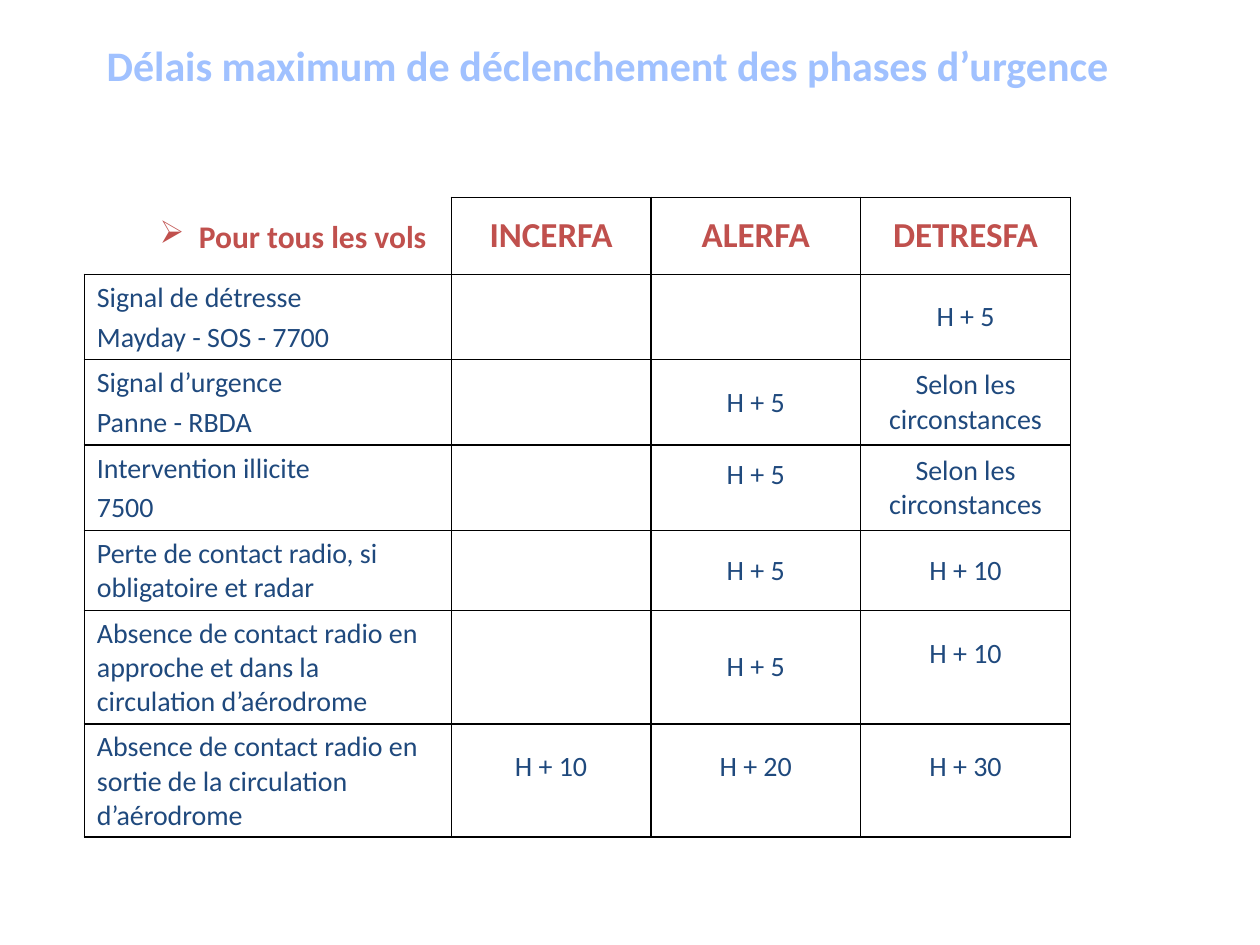
from dataclasses import dataclass

from lxml.etree import SubElement
from pptx import Presentation
from pptx.dml.color import RGBColor
from pptx.enum.text import MSO_ANCHOR, PP_ALIGN
from pptx.oxml.ns import qn
from pptx.util import Cm, Pt


@dataclass(frozen=True)
class Theme:
    font: str = "Calibri"
    title: RGBColor = RGBColor(0xA0, 0xC1, 0xFF)
    accent: RGBColor = RGBColor(0xC0, 0x50, 0x4D)
    body: RGBColor = RGBColor(0x1F, 0x49, 0x7D)
    border: str = "000000"
    title_size: int = 24
    header_size: int = 20
    label_size: int = 18
    body_size: int = 16
    border_width: int = 1


class SlideBuilder:
    def __init__(self, page, theme):
        self.page = page
        self.theme = theme

    def style(self, para, size, color, bold=False):
        font = para.font
        font.name = self.theme.font
        font.size = Pt(size)
        font.bold = bold
        font.color.rgb = color

    def text(self, content, left, top, width, height, size, color):
        box = self.page.shapes.add_textbox(Cm(left), Cm(top), Cm(width), Cm(height))
        frame = box.text_frame
        frame.word_wrap = True
        frame.vertical_anchor = MSO_ANCHOR.MIDDLE
        para = frame.paragraphs[0]
        para.text = content
        self.style(para, size, color, bold=True)
        return para

    def bulleted_text(self, content, left, top, width, height, size, color, symbol):
        para = self.text(content, left, top, width, height, size, color)
        properties = para._p.get_or_add_pPr()
        properties.set("marL", str(Cm(2.06)))
        properties.set("indent", str(-Cm(0.79)))
        bullet = properties.makeelement(qn("a:buChar"), {"char": symbol})
        properties.insert(0, bullet)

    def borders(self, cell, visible):
        properties = cell._tc.get_or_add_tcPr()
        for side in "LRTB":
            line = SubElement(properties, qn(f"a:ln{side}"), w=str(Pt(self.theme.border_width)))
            if side in visible:
                fill = SubElement(line, qn("a:solidFill"))
                SubElement(fill, qn("a:srgbClr"), val=self.theme.border)
            else:
                SubElement(line, qn("a:noFill"))

    def cell(self, cell, content, size, color, bold, centred):
        if not content:
            return
        frame = cell.text_frame
        frame.text = content
        if centred:
            cell.vertical_anchor = MSO_ANCHOR.MIDDLE
        for index, para in enumerate(frame.paragraphs):
            if index:
                para.space_before = Pt(size * 0.2)
            if centred:
                para.alignment = PP_ALIGN.CENTER
            self.style(para, size, color, bold)

    def table(self, rows, left, top, widths, heights, raised):
        frame = self.page.shapes.add_table(
            len(rows), len(widths), Cm(left), Cm(top), Cm(sum(widths)), Cm(sum(heights))
        )
        table = frame.table
        table.first_row = False
        table.horz_banding = False
        for column, width in zip(table.columns, widths):
            column.width = Cm(width)
        for row, height in zip(table.rows, heights):
            row.height = Cm(height)
        theme = self.theme
        for r, values in enumerate(rows):
            header = r == 0
            size = theme.header_size if header else theme.body_size
            color = theme.accent if header else theme.body
            for c, content in enumerate(values):
                cell = table.cell(r, c)
                self.borders(cell, "RB" if header and c == 0 else "LRTB")
                cell.fill.background()
                self.cell(cell, content, size, color, header, centred=c > 0)
                if (r, c) in raised:
                    cell.margin_bottom = Cm(0.67)


def main():
    deck = Presentation()
    deck.slide_width, deck.slide_height = Cm(25.4), Cm(19.05)
    theme = Theme()
    builder = SlideBuilder(deck.slides.add_slide(deck.slide_layouts[6]), theme)

    title = builder.text(
        "Délais maximum de déclenchement des phases d’urgence",
        1.9, 0, 21.6, 2.74, theme.title_size, theme.title,
    )
    title.line_spacing = 0.9

    delays = [
        ("", "INCERFA", "ALERFA", "DETRESFA"),
        ("Signal de détresse\nMayday - SOS - 7700", "", "", "H + 5"),
        ("Signal d’urgence\nPanne - RBDA", "", "H + 5", "Selon les circonstances"),
        ("Intervention illicite\n7500", "", "H + 5", "Selon les circonstances"),
        ("Perte de contact radio, si obligatoire et radar", "", "H + 5", "H + 10"),
        ("Absence de contact radio en approche et dans la circulation d’aérodrome",
         "", "H + 5", "H + 10"),
        ("Absence de contact radio en sortie de la circulation d’aérodrome",
         "H + 10", "H + 20", "H + 30"),
    ]
    builder.table(
        delays, 1.7, 3.98,
        widths=[7.4, 4.02, 4.23, 4.23],
        heights=[1.55, 1.57, 1.57, 1.57, 1.47, 2.06, 2.06],
        raised={(3, 2), (5, 3), (6, 1), (6, 2), (6, 3)},
    )
    builder.bulleted_text(
        "Pour tous les vols", 1.7, 4.02, 7.4, 1.48, theme.label_size, theme.accent, "➢"
    )
    deck.save("out.pptx")


if __name__ == "__main__":
    main()
